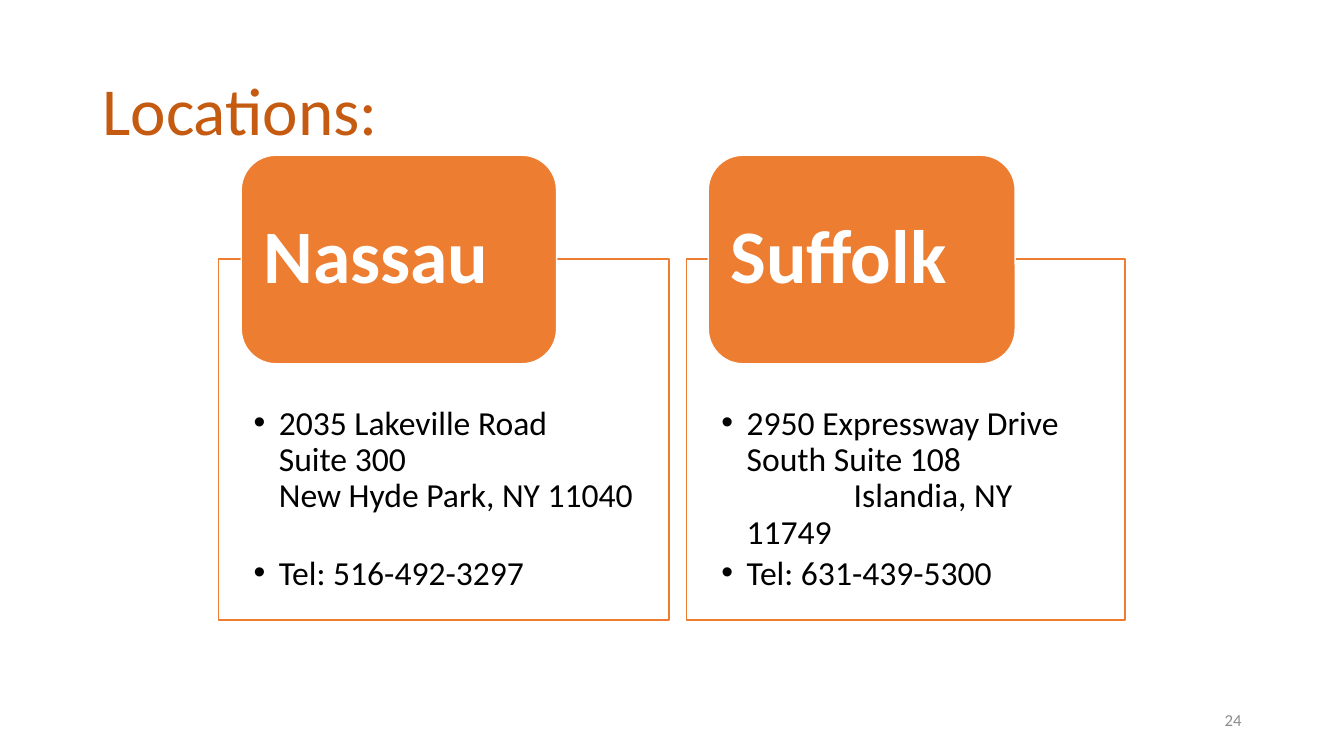
from pptx import Presentation
from pptx.dml.color import RGBColor as Color
from pptx.enum.shapes import MSO_SHAPE as Shape
from pptx.enum.text import MSO_ANCHOR as Anchor, PP_ALIGN as Align
from pptx.oxml.ns import qn
from pptx.util import Pt
from lxml.etree import SubElement

TITLE = "Locations:"
PAGE_NUMBER = "24"
OFFICES = [
    dict(name="Nassau", left=156.2, width=321.8, paragraphs=[
        dict(text="2035 Lakeville Road\vSuite 300\vNew Hyde Park, NY 11040", after=29.3),
        dict(text="Tel: 516-492-3297"),
    ]),
    dict(name="Suffolk", left=490.3, width=313.2, paragraphs=[
        dict(text="2950 Expressway Drive\vSouth Suite 108"),
        dict(text="Islandia, NY\v11749", indent=76.5, after=3.4),
        dict(text="Tel: 631-439-5300"),
    ]),
]
OFFICES[1]["paragraphs"][0]["after"] = 0


class Theme:
    font = "Calibri"
    title = dict(size=Pt(48), color="C55A11", bold=False)
    name = dict(size=Pt(54), color="FFFFFF", bold=True)
    body = dict(size=Pt(24), color="000000", bold=False)
    number = dict(size=Pt(12), color="8C8C8C", bold=False)
    accent = "ED7D31"
    white = "FFFFFF"


CARD_TOP, CARD_HEIGHT = 185, 257.8
TAB_TOP, TAB_HEIGHT = 110.9, 149
TAB_SHIFT, TAB_SHARE = 0.05, 0.7
BULLET_INDENT, BULLET_GAP = 18, 3.4


def set_frame(shape, anchor, margins):
    frame = shape.text_frame
    sides = ("left", "top", "right", "bottom")
    values = {f"margin_{side}": Pt(size) for side, size in zip(sides, margins)}
    for key, value in dict(values, word_wrap=True, vertical_anchor=anchor).items():
        setattr(frame, key, value)
    return frame


def write(para, text, style, **layout):
    para.text = text
    for key, value in dict(alignment=Align.LEFT, line_spacing=0.9, **layout).items():
        setattr(para, key, value)
    for span in para.runs:
        for key in ("size", "bold"):
            setattr(span.font, key, style[key])
        span.font.name = Theme.font
        span.font.color.rgb = Color.from_string(style["color"])


def set_indent(para, indent, bullet):
    properties = para._p.get_or_add_pPr()
    properties.set("marL", str(Pt(BULLET_INDENT)))
    properties.set("indent", str(Pt(indent)))
    if bullet:
        SubElement(properties, qn("a:buFont"), typeface="Arial")
        SubElement(properties, qn("a:buChar"), char="•")
    else:
        SubElement(properties, qn("a:buNone"))


def add_panel(page, kind, bounds, fill, line):
    panel = page.shapes.add_shape(kind, *map(Pt, bounds))
    panel.shadow.inherit = False
    panel.fill.solid()
    panel.fill.fore_color.rgb = Color.from_string(fill)
    panel.line.color.rgb = Color.from_string(line)
    panel.line.width = Pt(1)
    return panel


def add_office(page, office):
    left, width = office["left"], office["width"]
    card = add_panel(page, Shape.RECTANGLE, (left, CARD_TOP, width, CARD_HEIGHT),
                     Theme.white, Theme.accent)
    frame = set_frame(card, Anchor.TOP, (25, 105.1, 20, 13.7))
    for index, item in enumerate(office["paragraphs"]):
        para = frame.add_paragraph() if index else frame.paragraphs[0]
        set_indent(para, item.get("indent", -BULLET_INDENT), "indent" not in item)
        write(para, item["text"], Theme.body, space_before=Pt(0),
              space_after=Pt(item.get("after", BULLET_GAP)))

    bounds = (left + width * TAB_SHIFT, TAB_TOP, width * TAB_SHARE, TAB_HEIGHT)
    tab = add_panel(page, Shape.ROUNDED_RECTANGLE, bounds, Theme.accent, Theme.white)
    frame = set_frame(tab, Anchor.MIDDLE, (8.6, 0, 8.6, 0))
    write(frame.paragraphs[0], office["name"], Theme.name)


def main():
    deck = Presentation()
    deck.slide_width, deck.slide_height = Pt(960), Pt(540)
    page = deck.slides.add_slide(deck.slide_layouts[5])

    title = page.shapes.title
    for key, value in dict(left=66, top=28.8, width=828, height=104.4).items():
        setattr(title, key, Pt(value))
    frame = set_frame(title, Anchor.MIDDLE, (7.2, 3.6, 7.2, 3.6))
    write(frame.paragraphs[0], TITLE, Theme.title)

    for office in OFFICES:
        add_office(page, office)

    number = page.shapes.add_textbox(Pt(678), Pt(500.5), Pt(216), Pt(28.8))
    frame = set_frame(number, Anchor.MIDDLE, (7.2, 3.6, 7.2, 3.6))
    write(frame.paragraphs[0], PAGE_NUMBER, Theme.number)
    frame.paragraphs[0].alignment = Align.RIGHT

    deck.save("out.pptx")


if __name__ == "__main__":
    main()
